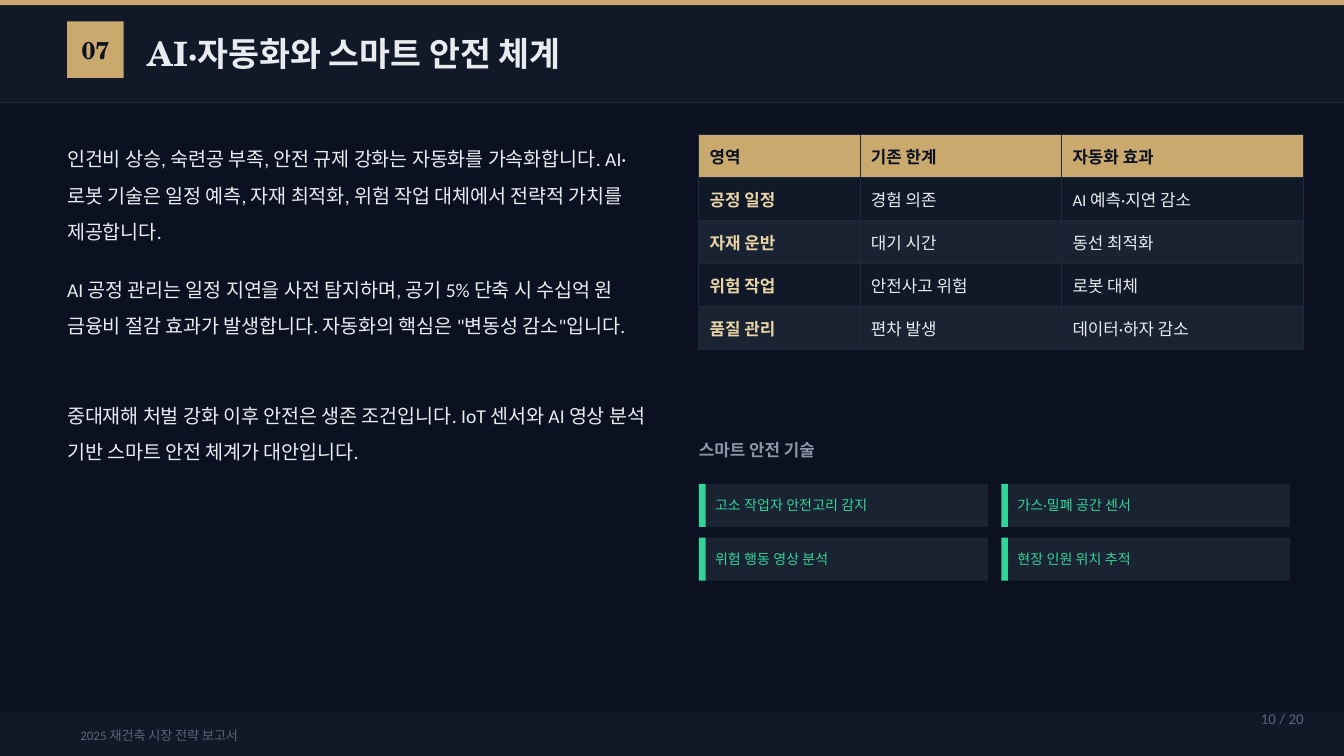
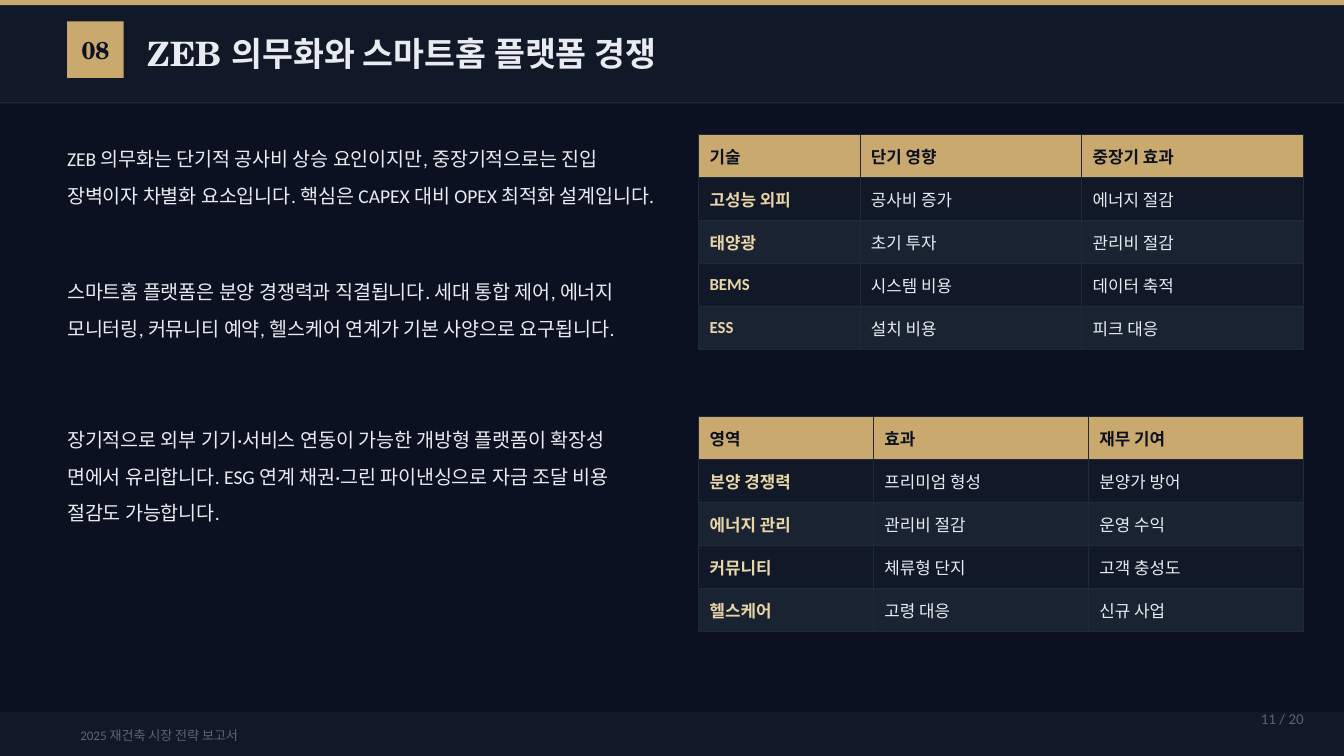
from lxml import etree
from pptx import Presentation
from pptx.dml.color import RGBColor
from pptx.enum.shapes import MSO_SHAPE
from pptx.enum.text import MSO_ANCHOR, MSO_AUTO_SIZE, PP_ALIGN
from pptx.oxml.ns import qn
from pptx.util import Inches, Pt

RECT = MSO_SHAPE.RECTANGLE
TOP, MIDDLE = MSO_ANCHOR.TOP, MSO_ANCHOR.MIDDLE
LEFT, CENTER, RIGHT = PP_ALIGN.LEFT, PP_ALIGN.CENTER, PP_ALIGN.RIGHT
NO_AUTOFIT = MSO_AUTO_SIZE.NONE

COLORS = {
    "night": "0B1120", "band": "111827", "row": "1A2332", "rule": "1E293B",
    "gold": "C9A96E", "cream": "E8D5A8", "ink": "E8ECF1",
    "label": "8B95A5", "muted": "5A6577", "green": "34D399",
}
SERIF, SANS = "TeX Gyre Schola", "Calibri"
STYLES = {
    "title": {"name": SERIF, "size": Pt(18), "bold": True, "color": "ink"},
    "number": {"name": SERIF, "size": Pt(13), "bold": True, "color": "night"},
    "body": {"name": SANS, "size": Pt(10.5), "color": "ink"},
    "label": {"name": SANS, "size": Pt(9), "bold": True, "color": "label"},
    "chip": {"name": SANS, "size": Pt(7.5), "color": "green"},
    "footer": {"name": SANS, "size": Pt(7), "color": "muted"},
    "page": {"name": SANS, "size": Pt(8), "color": "muted"},
    "head_cell": {"name": SANS, "size": Pt(9), "bold": True, "color": "night"},
    "key_cell": {"name": SANS, "size": Pt(9), "bold": True, "color": "cream"},
    "cell": {"name": SANS, "size": Pt(9), "bold": False, "color": "ink"},
}
REPORT = "2025 재건축 시장 전략 보고서"
PAGES = 20
ROW_HEIGHT = 0.32
BODY_LEFT, BODY_WIDTH = 0.5, 4.4
PANEL_LEFT, PANEL_WIDTH = 5.2, 4.5
CONTENT_TOP = 1


def rgb(color):
    return RGBColor.from_string(COLORS[color])


def inches(box):
    return [Inches(length) for length in box]


def set_text(frame, text, style, align=LEFT, anchor=MIDDLE, insets=(0, 0, 0, 0), spacing=None):
    frame_format = {"word_wrap": True, "auto_size": NO_AUTOFIT, "vertical_anchor": anchor}
    for side, inset in zip(("left", "top", "right", "bottom"), insets):
        frame_format[f"margin_{side}"] = Inches(inset)
    for attribute, value in frame_format.items():
        setattr(frame, attribute, value)
    frame.text = text
    paragraph = frame.paragraphs[0]
    paragraph.alignment = align
    paragraph.line_spacing = spacing
    set_font(paragraph.runs[0].font, style)


def set_font(font, style):
    for attribute, value in STYLES[style].items():
        if attribute == "color":
            font.color.rgb = rgb(value)
        else:
            setattr(font, attribute, value)


def add_text(slide, box, text, style, **layout):
    frame = slide.shapes.add_textbox(*inches(box)).text_frame
    set_text(frame, text, style, **layout)


def add_block(slide, box, color):
    block = slide.shapes.add_shape(RECT, *inches(box))
    block.shadow.inherit = False
    block.fill.solid()
    block.fill.fore_color.rgb = rgb(color)
    block.line.fill.background()
    return block


def add_header(slide, number, heading):
    add_block(slide, (0, 0, 10, 0.04), "gold")
    band = add_block(slide, (0, 0.04, 10, 0.72), "band")
    badge = add_block(slide, (0.5, 0.16, 0.42, 0.42), "gold")
    set_text(badge.text_frame, number, "number", align=CENTER)
    add_block(slide, (0, 0.76, 10, 0.01), "rule")
    title = slide.shapes.title
    title.left, title.top, title.width, title.height = inches((1.1, 0.12, 8.4, 0.55))
    set_text(title.text_frame, heading, "title")
    band.element.addnext(title.element)  # the placeholder starts out behind the band


def add_footer(slide, page):
    insets = (0.1, 0.05, 0.1, 0.05)
    add_block(slide, (0, 5.3, 10, 0.33), "band")
    add_text(slide, (0.5, 5.33, 4, 0.28), REPORT, "footer", insets=insets)
    add_text(slide, (8.8, 5.2, 1, 0.3), f"{page} / {PAGES}", "page", align=RIGHT, insets=insets)


def add_body(slide, passages):
    """Place (top, height, text) passages in the left column."""
    for top, height, text in passages:
        add_text(slide, (BODY_LEFT, top, BODY_WIDTH, height), text, "body",
                 anchor=TOP, spacing=1.55)


def add_borders(cell):
    """Outline a cell; call before filling it, as the schema puts lines first."""
    properties = cell._tc.get_or_add_tcPr()
    for side in ("lnL", "lnR", "lnT", "lnB"):
        line = etree.SubElement(properties, qn(f"a:{side}"), w=str(Pt(0.5)))
        fill = etree.SubElement(line, qn("a:solidFill"))
        etree.SubElement(fill, qn("a:srgbClr"), val=COLORS["rule"])


def format_cell(cell, text, style, color):
    add_borders(cell)
    cell.fill.solid()
    cell.fill.fore_color.rgb = rgb(color)
    cell.vertical_anchor = MIDDLE
    cell.margin_left = cell.margin_right = Inches(0.08)
    cell.margin_top = cell.margin_bottom = Inches(0.06)
    cell.text = text
    set_font(cell.text_frame.paragraphs[0].runs[0].font, style)


def add_effects_table(slide, top, widths, rows):
    box = (PANEL_LEFT, top, PANEL_WIDTH, ROW_HEIGHT * len(rows))
    table = slide.shapes.add_table(len(rows), len(widths), *inches(box)).table
    for column, width in zip(table.columns, widths):
        column.width = Inches(width)
    for r, row in enumerate(rows):
        table.rows[r].height = Inches(ROW_HEIGHT)
        color = "gold" if r == 0 else ("row", "band")[r % 2]
        for c, text in enumerate(row):
            style = "head_cell" if r == 0 else "key_cell" if c == 0 else "cell"
            format_cell(table.cell(r, c), text, style, color)


def add_safety_chips(slide, top, label, chips):
    """Place a label and, below it, a two-column grid of chips."""
    add_text(slide, (PANEL_LEFT, top, PANEL_WIDTH, 0.3), label, "label")
    for i, text in enumerate(chips):
        row, column = divmod(i, 2)
        left, chip_top = PANEL_LEFT + 2.25 * column, top + 0.4 + 0.4 * row
        chip = add_block(slide, (left, chip_top, 2.15, ROW_HEIGHT), "row")
        set_text(chip.text_frame, text, "chip", insets=(0.12, 0, 0.08, 0))
        add_block(slide, (left, chip_top, 0.05, ROW_HEIGHT), "green")


def add_section_slide(prs, number, heading, page, passages):
    slide = prs.slides.add_slide(prs.slide_layouts.get_by_name("Title Only"))
    slide.background.fill.solid()
    slide.background.fill.fore_color.rgb = rgb("night")
    add_header(slide, number, heading)
    add_body(slide, passages)
    add_footer(slide, page)
    return slide


def add_automation_slide(prs):
    slide = add_section_slide(prs, "07", "AI·자동화와 스마트 안전 체계", 10, [
        (CONTENT_TOP, 0.7, "인건비 상승, 숙련공 부족, 안전 규제 강화는 자동화를 가속화합니다. "
         "AI·로봇 기술은 일정 예측, 자재 최적화, 위험 작업 대체에서 전략적 가치를 제공합니다."),
        (1.97, 0.7, "AI 공정 관리는 일정 지연을 사전 탐지하며, 공기 5% 단축 시 수십억 원 "
         "금융비 절감 효과가 발생합니다. 자동화의 핵심은 \"변동성 감소\"입니다."),
        (2.91, 0.55, "중대재해 처벌 강화 이후 안전은 생존 조건입니다. IoT 센서와 AI 영상 "
         "분석 기반 스마트 안전 체계가 대안입니다."),
    ])
    add_effects_table(slide, CONTENT_TOP, (1.2, 1.5, 1.8), [
        ("영역", "기존 한계", "자동화 효과"),
        ("공정 일정", "경험 의존", "AI 예측·지연 감소"),
        ("자재 운반", "대기 시간", "동선 최적화"),
        ("위험 작업", "안전사고 위험", "로봇 대체"),
        ("품질 관리", "편차 발생", "데이터·하자 감소"),
    ])
    add_safety_chips(slide, 3.2, "스마트 안전 기술", [
        "고소 작업자 안전고리 감지", "가스·밀폐 공간 센서",
        "위험 행동 영상 분석", "현장 인원 위치 추적",
    ])


def add_zero_energy_slide(prs):
    slide = add_section_slide(prs, "08", "ZEB 의무화와 스마트홈 플랫폼 경쟁", 11, [
        (CONTENT_TOP, 0.6, "ZEB 의무화는 단기적 공사비 상승 요인이지만, 중장기적으로는 진입 "
         "장벽이자 차별화 요소입니다. 핵심은 CAPEX 대비 OPEX 최적화 설계입니다."),
        (1.99, 0.6, "스마트홈 플랫폼은 분양 경쟁력과 직결됩니다. 세대 통합 제어, 에너지 "
         "모니터링, 커뮤니티 예약, 헬스케어 연계가 기본 사양으로 요구됩니다."),
        (3.09, 0.65, "장기적으로 외부 기기·서비스 연동이 가능한 개방형 플랫폼이 확장성 "
         "면에서 유리합니다. ESG 연계 채권·그린 파이낸싱으로 자금 조달 비용 절감도 가능합니다."),
    ])
    add_effects_table(slide, CONTENT_TOP, (1.2, 1.65, 1.65), [
        ("기술", "단기 영향", "중장기 효과"),
        ("고성능 외피", "공사비 증가", "에너지 절감"),
        ("태양광", "초기 투자", "관리비 절감"),
        ("BEMS", "시스템 비용", "데이터 축적"),
        ("ESS", "설치 비용", "피크 대응"),
    ])
    add_effects_table(slide, 3.1, (1.3, 1.6, 1.6), [
        ("영역", "효과", "재무 기여"),
        ("분양 경쟁력", "프리미엄 형성", "분양가 방어"),
        ("에너지 관리", "관리비 절감", "운영 수익"),
        ("커뮤니티", "체류형 단지", "고객 충성도"),
        ("헬스케어", "고령 대응", "신규 사업"),
    ])


def main():
    prs = Presentation()
    prs.slide_width = Inches(10)
    prs.slide_height = prs.slide_width * 9 // 16
    add_automation_slide(prs)
    add_zero_energy_slide(prs)
    prs.save("out.pptx")


if __name__ == "__main__":
    main()
